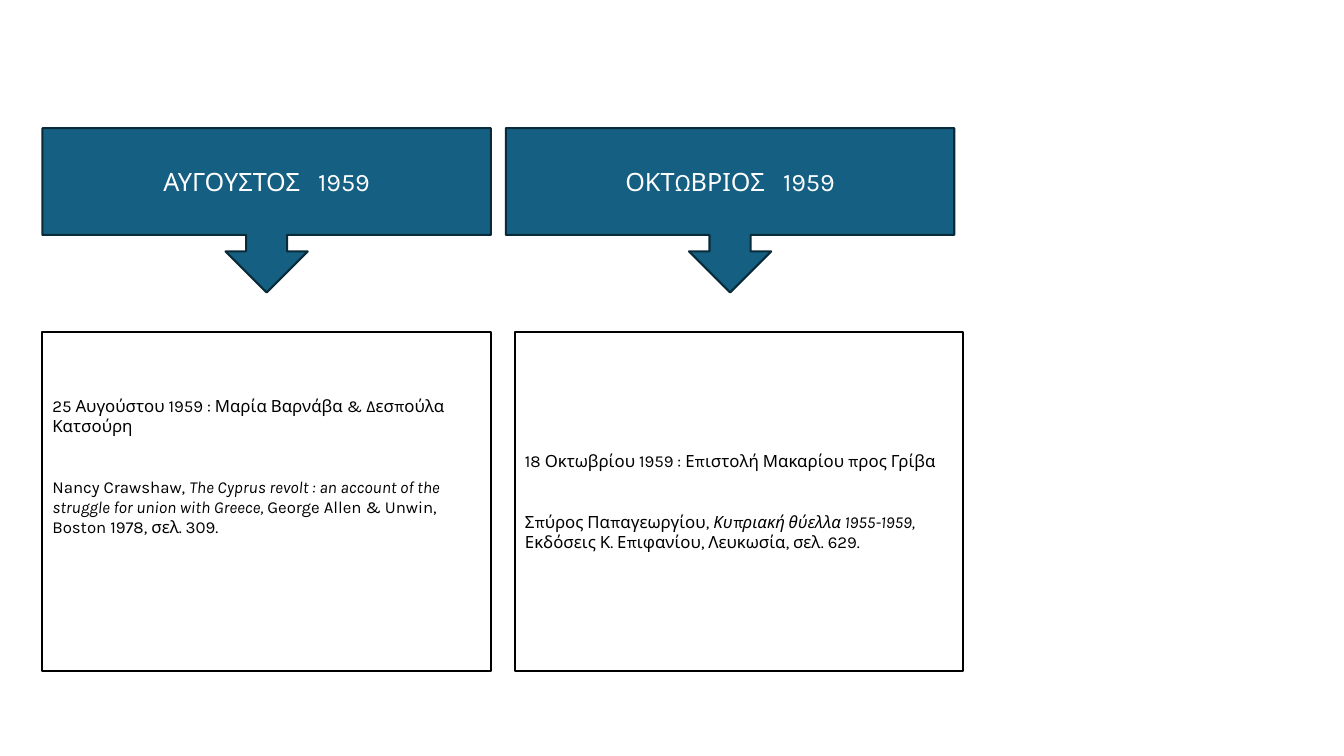
from pptx import Presentation
from pptx import util as u
from pptx.dml.color import RGBColor
from pptx.enum import shapes, text

BLUE = RGBColor(0x15, 0x60, 0x82)
NAVY = RGBColor(0x09, 0x2A, 0x39)
WHITE = RGBColor(0xFF, 0xFF, 0xFF)
BLACK = RGBColor(0, 0, 0)
FONT = "Karla"
WIDTH = u.Cm(11.3)
GAP = u.Pt(29)  # between the event and its reference


def add_box(slide, kind, left, top, height, fill, line):
    box = slide.shapes.add_shape(kind, left, top, WIDTH, height)
    box.shadow.inherit = False
    box.fill.solid()
    box.fill.fore_color.rgb = fill
    box.line.color.rgb = line
    box.line.width = u.Pt(1.5)
    box.text_frame.word_wrap = True
    box.text_frame.vertical_anchor = text.MSO_ANCHOR.MIDDLE
    return box


def add_run(para, words, size, color, italic=False):
    run = para.add_run()
    run.text = words
    font = run.font
    font.name, font.size, font.italic = FONT, u.Pt(size), italic
    font.color.rgb = color
    return run


def add_month(slide, left, month, year):
    box = add_box(slide, shapes.MSO_SHAPE.DOWN_ARROW_CALLOUT, left,
                  u.Cm(3.23), u.Cm(4.14), BLUE, NAVY)
    para = box.text_frame.paragraphs[0]
    para.alignment = text.PP_ALIGN.CENTER
    add_run(para, month, 18, WHITE)
    # Widen the space before the year
    space = add_run(para, " ", 18, WHITE)
    space.font._element.set("spc", "860")
    add_run(para, year, 18, WHITE)


def add_event(slide, left, event, source, foot):
    box = add_box(slide, shapes.MSO_SHAPE.RECTANGLE, left,
                  u.Cm(8.36), u.Cm(8.56), WHITE, BLACK)
    frame = box.text_frame
    frame.margin_bottom = foot
    first = frame.paragraphs[0]
    add_run(first, event, 12, BLACK)
    second = frame.add_paragraph()
    second.space_before = GAP
    for para in (first, second):
        para.alignment = text.PP_ALIGN.LEFT
    author, title, press = source
    add_run(second, author, 12, BLACK)
    add_run(second, title, 12, BLACK, italic=True)
    add_run(second, press, 12, BLACK)


def main():
    prs = Presentation()
    prs.slide_width, prs.slide_height = u.Cm(33.87), u.Cm(19.05)
    slide = prs.slides.add_slide(prs.slide_layouts[6])

    # August
    add_month(slide, u.Cm(1.07), "ΑΥΓΟΥΣΤΟΣ", "1959")
    add_event(slide, u.Cm(1.07),
              "25 Αυγούστου 1959 : Μαρία Βαρνάβα & Δεσπούλα Κατσούρη",
              ("Nancy Crawshaw, ",
               "The Cyprus revolt : an account of the struggle for union "
               "with Greece, ",
               "George Allen & Unwin, Boston 1978, σελ. 309."),
              u.Cm(1.9))

    # October
    add_month(slide, u.Cm(12.75), "ΟΚΤΩΒΡΙΟΣ", "1959")
    add_event(slide, u.Cm(12.98),
              "18 Οκτωβρίου 1959 : Επιστολή Μακαρίου προς Γρίβα",
              ("Σπύρος Παπαγεωργίου, ",
               "Κυπριακή θύελλα 1955-1959,",
               " Εκδόσεις Κ. Επιφανίου, Λευκωσία, σελ. 629."),
              u.Cm(0.13))

    prs.save("out.pptx")


if __name__ == "__main__":
    main()
